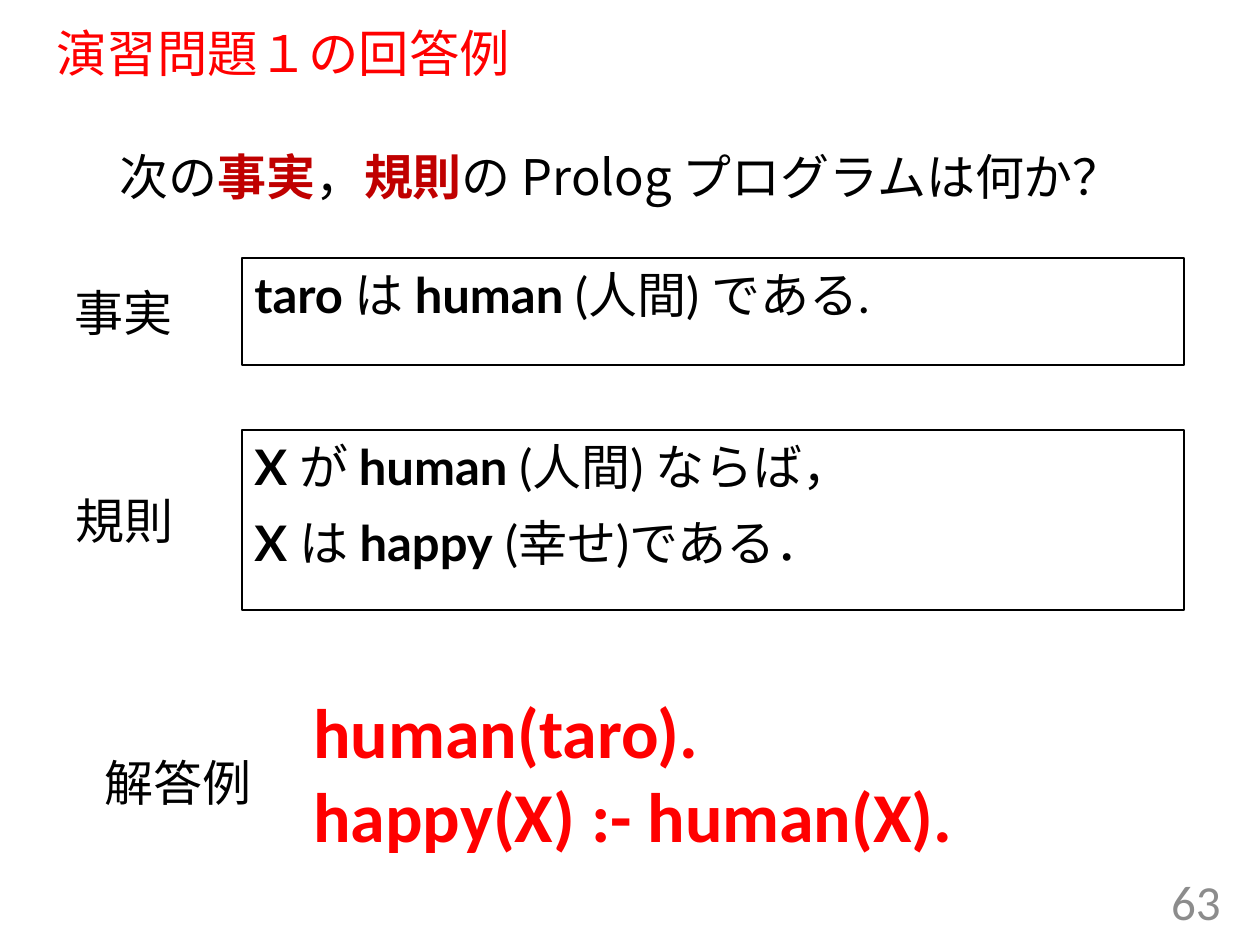
"""Build the slide with a sample answer to Prolog exercise 1."""
from dataclasses import dataclass
from typing import NamedTuple

from pptx import Presentation
from pptx import util as u
from pptx.dml.color import RGBColor
from pptx.enum import shapes, text
from pptx.slide import Slide

PX_PER_INCH = 126
BLACK = RGBColor(0x00, 0x00, 0x00)
RED = RGBColor(0xFF, 0x00, 0x00)
DARK_RED = RGBColor(0xC0, 0x00, 0x00)
GRAY = RGBColor(0x8C, 0x8C, 0x8C)
LATO, CALIBRI, NOTO = "Lato", "Calibri", "Noto Sans CJK JP"
LEFT, CENTER, RIGHT = text.PP_ALIGN.LEFT, text.PP_ALIGN.CENTER, text.PP_ALIGN.RIGHT
TOP, MIDDLE = text.MSO_ANCHOR.TOP, text.MSO_ANCHOR.MIDDLE


class Run(NamedTuple):
    text: str
    bold: bool = False
    color: RGBColor | None = None


@dataclass(frozen=True)
class Block:
    left: int
    top: int
    width: int
    height: int
    lines: list[list[Run]]
    font: str = NOTO
    size: float = 28
    color: RGBColor = BLACK
    align: text.PP_ALIGN = LEFT
    anchor: text.MSO_ANCHOR = TOP
    wrap: bool = False
    framed: bool = False
    before: int = 0
    spacing: float = 1.0


def px(n: int) -> u.Emu:
    return u.Emu(round(n * u.Inches(1) / PX_PER_INCH))


def label(left: int, top: int, width: int, words: str, align: text.PP_ALIGN = CENTER) -> Block:
    return Block(left, top, width, 72, [[Run(words)]], align=align)


def statement(top: int, height: int, lines: list[list[Run]]) -> Block:
    return Block(242, top, 942, height, lines, LATO, wrap=True, framed=True, before=10)


def draw(s: Slide, block: Block) -> None:
    box = [px(n) for n in (block.left, block.top, block.width, block.height)]
    if block.framed:
        sp = s.shapes.add_shape(shapes.MSO_SHAPE.RECTANGLE, *box)
        sp.shadow.inherit = False
        sp.fill.background()
        sp.line.color.rgb = BLACK
        sp.line.width = u.Pt(0.75)
    else:
        sp = s.shapes.add_textbox(*box)
    tf = sp.text_frame
    tf.word_wrap = block.wrap
    tf.vertical_anchor = block.anchor
    for i, line in enumerate(block.lines):
        p = tf.add_paragraph() if i else tf.paragraphs[0]
        p.alignment = block.align
        p.space_before = u.Pt(block.before)
        p.line_spacing = block.spacing
        p.font.name = block.font
        p.font.size = u.Pt(block.size)
        for run in line:
            r = p.add_run()
            r.text = run.text
            r.font.bold = run.bold
            r.font.color.rgb = run.color or block.color


BLOCKS = [
    Block(949, 876, 284, 50, [[Run("63")]], CALIBRI, color=GRAY, align=RIGHT,
          anchor=MIDDLE, wrap=True),
    statement(258, 107, [
        [Run("taro ", True), Run("は "), Run("human ", True), Run("(人間) である.")],
    ]),
    label(62, 276, 125, "事実", LEFT),
    statement(430, 180, [
        [Run("X ", True), Run("が "), Run("human ", True), Run("(人間) ならば，")],
        [Run("X", True), Run(" は "), Run("happy", True), Run(" (幸せ)である．")],
    ]),
    label(62, 484, 125, "規則"),
    Block(301, 682, 672, 183, [
        [Run("human(taro).", True)],
        [Run("happy(X) :- human(X).", True)],
    ], CALIBRI, 40, RED),
    Block(44, 24, 1166, 64, [[Run("演習問題１の回答例")]], LATO, 28.8, RED,
          anchor=MIDDLE, wrap=True, spacing=0.9),
    label(91, 746, 174, "解答例"),
    Block(107, 140, 1051, 72, [[
        Run("次の"), Run("事実", True, DARK_RED), Run("，"),
        Run("規則", True, DARK_RED), Run("の Prolog プログラムは何か？"),
    ]]),
]


def main() -> None:
    prs = Presentation()
    prs.slide_width, prs.slide_height = u.Inches(10), u.Inches(7.5)
    s = prs.slides.add_slide(prs.slide_layouts[6])
    for block in BLOCKS:
        draw(s, block)
    prs.save("out.pptx")


if __name__ == "__main__":
    main()
